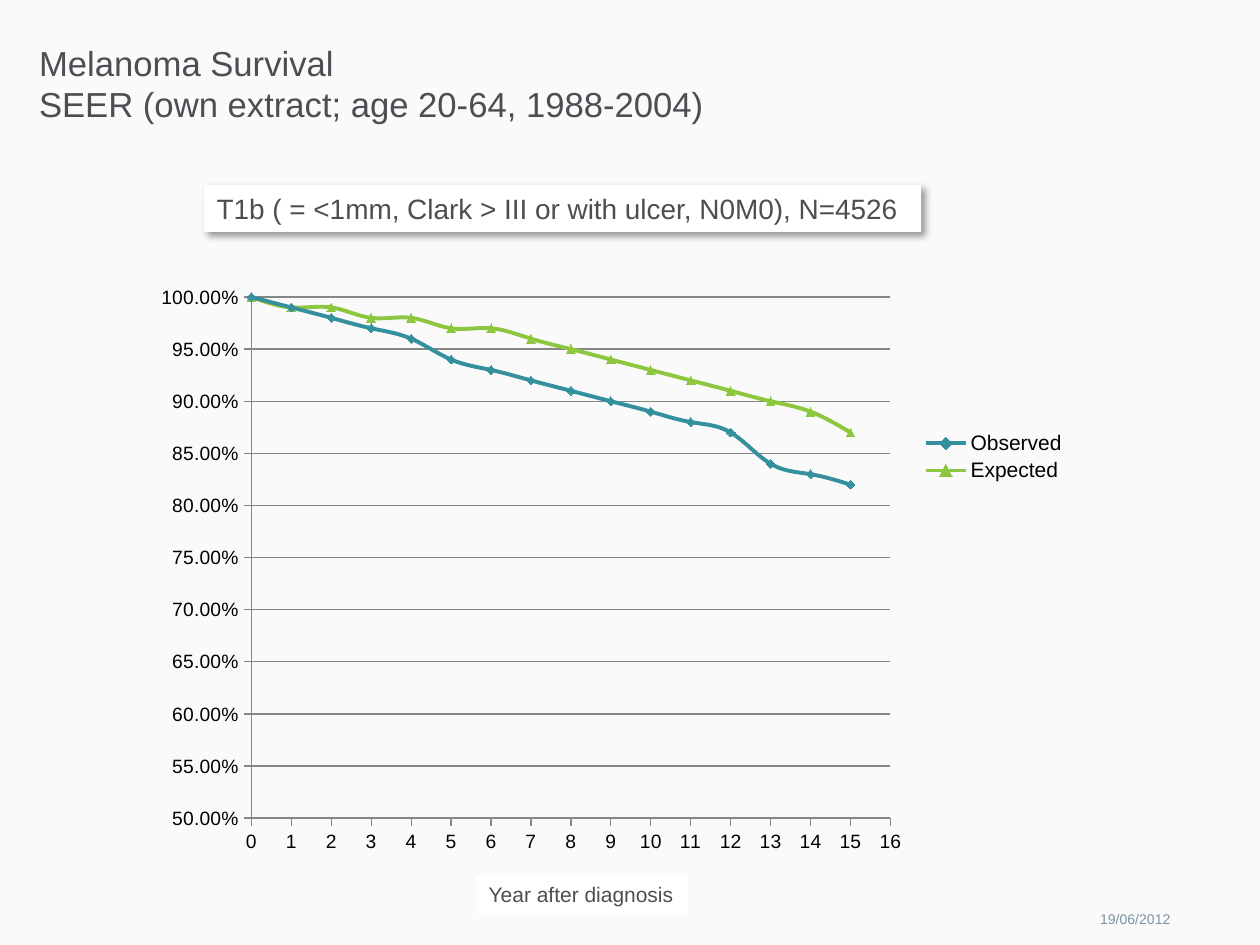
from lxml.etree import SubElement
from pptx import Presentation
from pptx.chart.data import XyChartData
from pptx.dml.color import RGBColor
from pptx.enum.chart import XL_CHART_TYPE, XL_LEGEND_POSITION, XL_MARKER_STYLE, XL_TICK_MARK
from pptx.enum.shapes import MSO_SHAPE
from pptx.enum.text import MSO_ANCHOR, PP_ALIGN
from pptx.oxml import parse_xml
from pptx.oxml.ns import nsdecls, qn
from pptx.util import Inches, Pt

BACKGROUND = RGBColor(0xFA, 0xFA, 0xFA)
WHITE = RGBColor(0xFF, 0xFF, 0xFF)
BLACK = RGBColor(0, 0, 0)
INK = RGBColor(0x4D, 0x4E, 0x53)
DATE_GREY = RGBColor(0x7A, 0x94, 0xA3)
GRID_GREY = RGBColor(0x86, 0x86, 0x86)
TEAL = RGBColor(0x34, 0x90, 0x9C)
GREEN = RGBColor(0x8D, 0xC6, 0x3F)
FONT = "Arial"

SURVIVAL = [
    ("Observed", TEAL, XL_MARKER_STYLE.DIAMOND,
     [1, 0.99, 0.98, 0.97, 0.96, 0.94, 0.93, 0.92,
      0.91, 0.9, 0.89, 0.88, 0.87, 0.84, 0.83, 0.82]),
    ("Expected", GREEN, XL_MARKER_STYLE.TRIANGLE,
     [1, 0.99, 0.99, 0.98, 0.98, 0.97, 0.97, 0.96,
      0.95, 0.94, 0.93, 0.92, 0.91, 0.9, 0.89, 0.87]),
]


def style_font(font, size, color):
    """Apply the slide font with a size and colour."""
    font.name = FONT
    font.size = Pt(size)
    font.color.rgb = color


def add_text(page, box, lines, size, color, align=PP_ALIGN.LEFT, anchor=MSO_ANCHOR.TOP):
    """Place unpadded text in the box, one paragraph per line."""
    frame = page.shapes.add_textbox(*map(Inches, box)).text_frame
    frame.word_wrap = True
    frame.vertical_anchor = anchor
    frame.margin_left = frame.margin_right = frame.margin_top = frame.margin_bottom = 0
    frame.text = "\n".join(lines)
    for para in frame.paragraphs:
        para.alignment = align
        for span in para.runs:
            style_font(span.font, size, color)


def add_label(page, box, text, size):
    """Place a white label with left-aligned text and return its shape."""
    label = page.shapes.add_shape(MSO_SHAPE.RECTANGLE, *map(Inches, box))
    label.shadow.inherit = False
    label.fill.solid()
    label.fill.fore_color.rgb = WHITE
    label.line.fill.background()
    label.text_frame.text = text
    label.text_frame.word_wrap = True
    label.text_frame.vertical_anchor = MSO_ANCHOR.TOP
    para = label.text_frame.paragraphs[0]
    para.alignment = PP_ALIGN.LEFT
    style_font(para.runs[0].font, size, INK)
    return label


def add_shadow(shape):
    """Give the shape a soft shadow to the lower right."""
    effects = shape._element.spPr.find(qn("a:effectLst"))
    effects.append(parse_xml(
        f'<a:outerShdw {nsdecls("a")} blurRad="{Pt(4)}" dist="{Pt(3)}" dir="2700000" '
        'algn="tl" rotWithShape="0"><a:srgbClr val="000000"><a:alpha val="40000"/>'
        '</a:srgbClr></a:outerShdw>'))


def manual_layout(x, y, width, height, inner=False):
    """Build a chart layout from fractions of the chart area."""
    layout = parse_xml(f'<c:layout {nsdecls("c")}><c:manualLayout/></c:layout>')
    settings = [("layoutTarget", "inner")] if inner else []
    settings += [("xMode", "edge"), ("yMode", "edge"),
                 ("x", x), ("y", y), ("w", width), ("h", height)]
    for tag, value in settings:
        SubElement(layout[0], qn(f"c:{tag}")).set("val", str(value))
    return layout


def style_axis(axis, low, high, step, number_format):
    """Set the scale, labels and ticks of an axis."""
    axis.minimum_scale, axis.maximum_scale, axis.major_unit = low, high, step
    axis.major_tick_mark = XL_TICK_MARK.OUTSIDE
    axis.minor_tick_mark = XL_TICK_MARK.NONE
    axis.tick_labels.number_format = number_format
    axis.tick_labels.number_format_is_linked = False
    style_font(axis.tick_labels.font, 11, BLACK)
    axis.format.line.color.rgb = GRID_GREY
    axis.format.line.width = Pt(0.75)


def add_survival_chart(page, box):
    """Draw the observed and expected survival curves in the box."""
    data = XyChartData()
    for name, _, _, rates in SURVIVAL:
        series = data.add_series(name)
        for year, rate in enumerate(rates):
            series.add_data_point(year, rate)
    chart = page.shapes.add_chart(
        XL_CHART_TYPE.XY_SCATTER_SMOOTH, *map(Inches, box), data).chart
    style_font(chart.font, 10, BLACK)
    chart.has_title = False
    chart.plots[0].vary_by_categories = False

    style_axis(chart.category_axis, 0, 16, 1, "0")
    style_axis(chart.value_axis, 0.5, 1, 0.05, "0.00%")
    chart.category_axis.has_major_gridlines = False
    chart.value_axis.has_major_gridlines = True
    grid_line = chart.value_axis.major_gridlines.format.line
    grid_line.color.rgb = GRID_GREY
    grid_line.width = Pt(0.75)

    for series, (_, color, marker, _) in zip(chart.plots[0].series, SURVIVAL):
        series.format.line.color.rgb = color
        series.format.line.width = Pt(2.25)
        series.marker.style = marker
        series.marker.size = 5
        series.marker.format.fill.solid()
        series.marker.format.fill.fore_color.rgb = color
        series.marker.format.line.color.rgb = color
        series._element.find(qn("c:smooth")).set("val", "1")

    chart.has_legend = True
    chart.legend.position = XL_LEGEND_POSITION.RIGHT
    chart.legend.include_in_layout = False
    style_font(chart.legend.font, 12, BLACK)

    plot_area = chart._chartSpace.chart.plotArea
    for old_layout in plot_area.findall(qn("c:layout")):
        plot_area.remove(old_layout)
    plot_area.insert(0, manual_layout(0.12, 0.04, 0.68, 0.88, inner=True))
    legend = chart.legend._element
    for old_layout in legend.findall(qn("c:layout")):
        legend.remove(old_layout)
    legend.find(qn("c:legendPos")).addnext(manual_layout(0.83, 0.26, 0.16, 0.1))


def main():
    """Build and save the slide."""
    deck = Presentation()
    deck.slide_width, deck.slide_height = Inches(10), Inches(7.5)
    page = deck.slides.add_slide(deck.slide_layouts[6])
    page.background.fill.solid()
    page.background.fill.fore_color.rgb = BACKGROUND

    add_survival_chart(page, (1.1, 2.17, 7.46, 4.7))
    add_text(page, (8.38, 7.14, 0.91, 0.3), ["19/06/2012"], 8, DATE_GREY,
             PP_ALIGN.RIGHT, MSO_ANCHOR.MIDDLE)
    add_text(page, (0.31, 0.33, 7.48, 0.79),
             ["Melanoma Survival", "SEER (own extract; age 20-64, 1988-2004)"], 19.8, INK)
    stage = add_label(page, (1.62, 1.47, 5.69, 0.37),
                      "T1b ( = <1mm, Clark > III or with ulcer, N0M0), N=4526", 16)
    add_shadow(stage)
    add_label(page, (3.78, 6.95, 1.68, 0.3), "Year after diagnosis", 12)
    deck.save("out.pptx")


if __name__ == "__main__":
    main()
